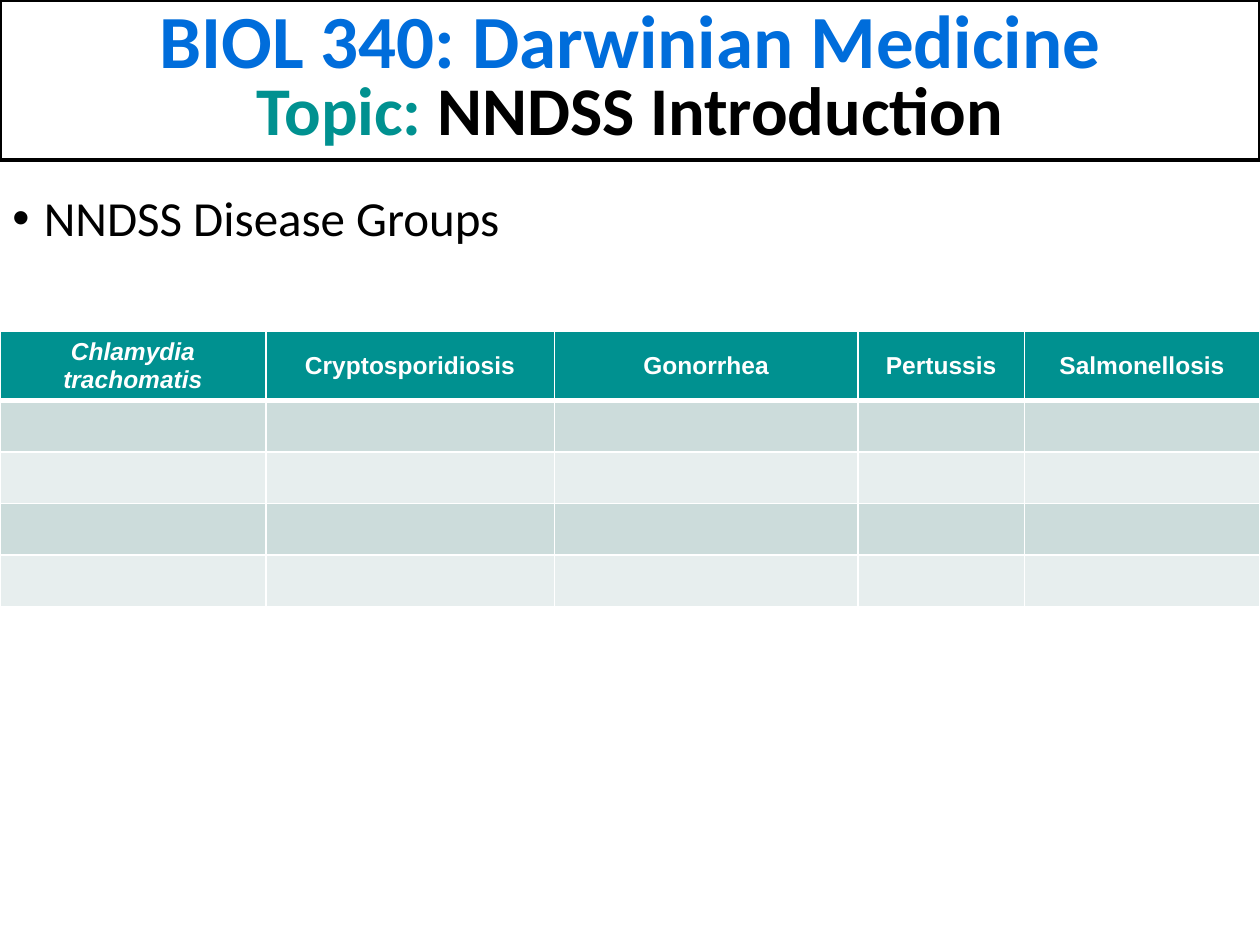
"""Build the NNDSS introduction slide with its disease group table."""
from lxml import etree
from pptx import Presentation
from pptx.dml.color import RGBColor
from pptx.enum import shapes, text
from pptx.oxml import ns
from pptx.util import Inches, Pt

COLORS = {"blue": "006DDB", "teal": "009190", "black": "000000", "white": "FFFFFF",
          "band_dark": "CCDCDB", "band_light": "E7EEEE"}
DISEASES = ["Chlamydia trachomatis", "Cryptosporidiosis", "Gonorrhea", "Pertussis", "Salmonellosis"]
COLUMN_WIDTHS = [2.11, 2.29, 2.41, 1.32, 1.87]
ROW_HEIGHTS = [0.53] + [0.41] * 4


def add_text(paragraph, content, size, color="black", font="Calibri", bold=False, italic=False):
    run = paragraph.add_run()
    run.text = content
    run.font.name = font
    run.font.size = Pt(size)
    run.font.bold = bold
    run.font.italic = italic
    run.font.color.rgb = RGBColor.from_string(COLORS[color])


def set_borders(cell, widths):
    properties = cell._tc.get_or_add_tcPr()
    for index, (side, width) in enumerate(widths.items()):
        line = etree.Element(ns.qn(f"a:ln{side}"), w=str(Pt(width)))
        fill = etree.SubElement(line, ns.qn("a:solidFill"))
        etree.SubElement(fill, ns.qn("a:srgbClr"), val=COLORS["white"])
        properties.insert(index, line)


presentation = Presentation()
presentation.slide_width, presentation.slide_height = Inches(10), Inches(7.5)
slide = presentation.slides.add_slide(presentation.slide_layouts[6])

banner = slide.shapes.add_shape(shapes.MSO_SHAPE.RECTANGLE, 0, 0, Inches(10), Inches(1.27))
banner.shadow.inherit = False
banner.fill.background()
banner.line.color.rgb = RGBColor.from_string(COLORS["black"])
banner.line.width = Pt(2.25)
banner.text_frame.vertical_anchor = text.MSO_ANCHOR.MIDDLE
title = banner.text_frame.paragraphs[0]
title.alignment = text.PP_ALIGN.CENTER
title.line_spacing = 0.8
add_text(title, "BIOL 340: Darwinian Medicine", 42.9, "blue", bold=True)
title.add_line_break()
add_text(title, "Topic: ", 39, "teal", bold=True)
add_text(title, "NNDSS Introduction", 39, bold=True)

body = slide.shapes.add_textbox(0, Inches(1.49), Inches(10), Inches(5.36))
body.text_frame.word_wrap = True
bullet = body.text_frame.paragraphs[0]
bullet.line_spacing = 0.9
bullet.space_before = Pt(10)
bullet_properties = bullet._p.get_or_add_pPr()
bullet_properties.set("marL", str(Inches(0.25)))
bullet_properties.set("indent", str(Inches(-0.25)))
etree.SubElement(bullet_properties, ns.qn("a:buFont"), typeface="Arial")
etree.SubElement(bullet_properties, ns.qn("a:buChar"), char="•")
add_text(bullet, "NNDSS Disease Groups", 28)

table = slide.shapes.add_table(len(ROW_HEIGHTS), len(DISEASES), 0, Inches(2.63),
                               Inches(10), Inches(sum(ROW_HEIGHTS))).table
for column, width in zip(table.columns, COLUMN_WIDTHS):
    column.width = Inches(width)
for row_index, height in enumerate(ROW_HEIGHTS):
    table.rows[row_index].height = Inches(height)
    band = "teal" if row_index == 0 else "band_dark" if row_index % 2 else "band_light"
    for column_index, disease in enumerate(DISEASES):
        cell = table.cell(row_index, column_index)
        cell.margin_top = cell.margin_bottom = Inches(0.04)
        cell.vertical_anchor = text.MSO_ANCHOR.MIDDLE
        cell.fill.solid()
        cell.fill.fore_color.rgb = RGBColor.from_string(COLORS[band])
        set_borders(cell, {"L": 1, "R": 1, "T": 3 if row_index == 1 else 1,
                           "B": 3 if row_index == 0 else 1})
        if row_index == 0:
            heading = cell.text_frame.paragraphs[0]
            heading.alignment = text.PP_ALIGN.CENTER
            add_text(heading, disease, 14, "white", "Arial", bold=True, italic=column_index == 0)

presentation.save("out.pptx")
